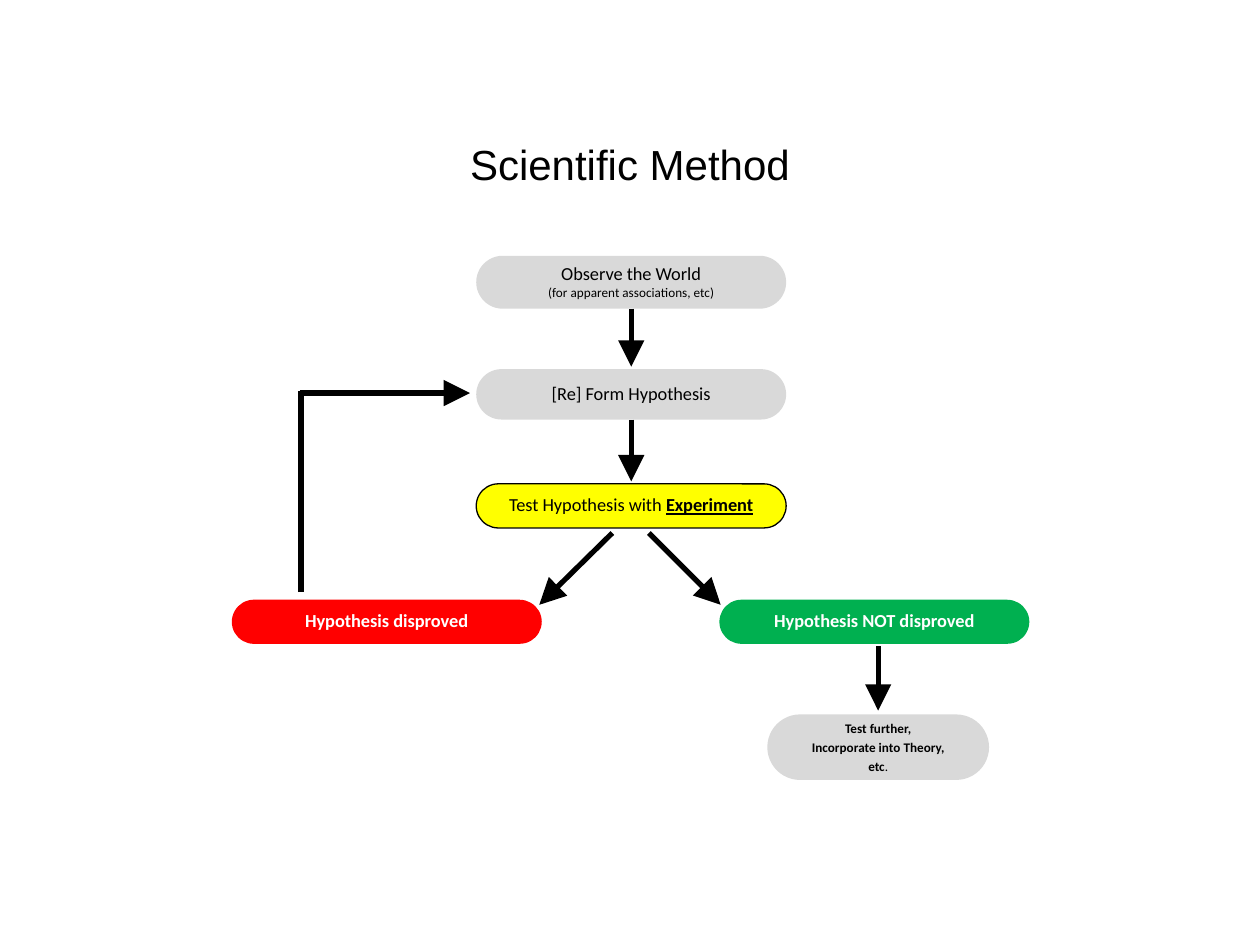
from dataclasses import dataclass
from typing import Optional

from lxml.etree import SubElement
from pptx import Presentation
from pptx.dml.color import RGBColor
from pptx.enum.shapes import MSO_CONNECTOR as Connector, MSO_SHAPE as Shape
from pptx.enum.text import MSO_ANCHOR as Anchor, PP_ALIGN as Align
from pptx.oxml.ns import qn
from pptx.util import Inches, Pt


@dataclass(frozen=True)
class Theme:
    black: str = "000000"
    white: str = "FFFFFF"
    gray: str = "D9D9D9"
    yellow: str = "FFFF00"
    green: str = "00B050"
    red: str = "FF0000"
    title_font: str = "Arial"
    body_font: str = "Calibri"
    title_size: float = 24
    body_size: float = 10.5
    small_size: float = 7.5
    arrow_width: float = 3
    outline_width: float = 0.75


THEME = Theme()


@dataclass(frozen=True)
class Words:
    text: str
    size: float = THEME.body_size
    bold: bool = False
    underline: bool = False


@dataclass(frozen=True)
class Step:
    key: str
    left: float
    top: float
    width: float
    height: float
    fill: str
    lines: tuple[tuple[Words, ...], ...]
    color: str = THEME.black
    outlined: bool = False
    spacing: Optional[float] = None


@dataclass(frozen=True)
class Arrow:
    start: tuple[float, float]
    end: tuple[float, float]
    source: Optional[str] = None  # step whose bottom the arrow leaves
    head: bool = True


WIDTH = 2.46
CENTER = 5.01
LEFT = CENTER - WIDTH / 2
FURTHER_X = 6.97

STEPS = (
    Step("observe", LEFT, 2.03, WIDTH, 0.42, THEME.gray, (
        (Words("Observe the World"),),
        (Words("(for apparent associations, etc)", THEME.small_size),),
    )),
    Step("form", LEFT, 2.93, WIDTH, 0.4, THEME.gray,
         ((Words("[Re] Form Hypothesis"),),)),
    Step("test", LEFT, 3.84, WIDTH, 0.35, THEME.yellow, (
        (Words("Test Hypothesis with "),
         Words("Experiment", bold=True, underline=True)),
    ), outlined=True),
    Step("disproved", 1.84, 4.76, WIDTH, 0.35, THEME.red,
         ((Words("Hypothesis disproved", bold=True),),), THEME.white),
    Step("not disproved", 5.71, 4.76, WIDTH, 0.35, THEME.green,
         ((Words("Hypothesis NOT disproved", bold=True),),), THEME.white),
    Step("further", 6.09, 5.67, 1.76, 0.52, THEME.gray, (
        (Words("Test further,", THEME.small_size, True),),
        (Words("Incorporate into Theory,", THEME.small_size, True),),
        (Words("etc", THEME.small_size, True), Words(".", THEME.small_size)),
    ), spacing=1.2),
)

ARROWS = (
    Arrow((CENTER, 2.45), (CENTER, 2.91), "observe"),
    Arrow((CENTER, 3.33), (CENTER, 3.82), "form"),
    Arrow((4.86, 4.23), (4.28, 4.8)),
    Arrow((5.15, 4.23), (5.72, 4.8)),
    Arrow((FURTHER_X, 5.13), (FURTHER_X, 5.64)),
    # Return path from the disproved hypothesis
    Arrow((2.39, 4.7), (2.39, 3.1), head=False),
    Arrow((2.38, 3.12), (3.73, 3.12)),
)


def rgb(color: str) -> RGBColor:
    return RGBColor.from_string(color)


def format_run(run, font: str, size: float, color: str) -> None:
    run.font.name = font
    run.font.size = Pt(size)
    run.font.color.rgb = rgb(color)


def draw_title(slide, text: str) -> None:
    title = slide.shapes.title
    title.left, title.top = Inches(1.25), Inches(1.06)
    title.width, title.height = Inches(7.5), Inches(0.42)
    frame = title.text_frame
    frame.text = text
    frame.vertical_anchor = Anchor.TOP
    frame.margin_left = frame.margin_right = Inches(0.07)
    frame.margin_top = frame.margin_bottom = Inches(0.04)
    paragraph = frame.paragraphs[0]
    paragraph.alignment = Align.CENTER
    format_run(paragraph.runs[0], THEME.title_font, THEME.title_size, THEME.black)


def draw_step(slide, step: Step):
    shape = slide.shapes.add_shape(
        Shape.ROUNDED_RECTANGLE, Inches(step.left), Inches(step.top),
        Inches(step.width), Inches(step.height))
    shape.adjustments[0] = 0.5
    shape.shadow.inherit = False
    shape.fill.solid()
    shape.fill.fore_color.rgb = rgb(step.fill)
    if step.outlined:
        shape.line.color.rgb = rgb(THEME.black)
        shape.line.width = Pt(THEME.outline_width)
    else:
        shape.line.fill.background()

    frame = shape.text_frame
    frame.word_wrap = True
    frame.vertical_anchor = Anchor.MIDDLE
    frame.margin_left = frame.margin_right = frame.margin_top = 0
    frame.margin_bottom = Inches(0.02)
    for index, line in enumerate(step.lines):
        paragraph = frame.add_paragraph() if index else frame.paragraphs[0]
        paragraph.alignment = Align.CENTER
        paragraph.line_spacing = step.spacing
        for words in line:
            run = paragraph.add_run()
            run.text = words.text
            format_run(run, THEME.body_font, words.size, step.color)
            run.font.bold = words.bold
            run.font.underline = words.underline
    return shape


def draw_arrow(slide, arrow: Arrow, shapes: dict) -> None:
    points = [Inches(value) for value in (*arrow.start, *arrow.end)]
    connector = slide.shapes.add_connector(Connector.STRAIGHT, *points)
    connector.line.color.rgb = rgb(THEME.black)
    connector.line.width = Pt(THEME.arrow_width)
    if arrow.head:
        SubElement(connector.line._get_or_add_ln(), qn("a:tailEnd"),
                   type="triangle", w="lg", len="lg")
    SubElement(connector._element.spPr, qn("a:effectLst"))
    if arrow.source:
        connector.begin_connect(shapes[arrow.source], 2)


def main() -> None:
    presentation = Presentation()
    presentation.slide_width, presentation.slide_height = Inches(10), Inches(7.5)
    slide = presentation.slides.add_slide(presentation.slide_layouts[5])

    draw_title(slide, "Scientific Method")
    # Flowchart: steps first, then the arrows between them
    shapes = {step.key: draw_step(slide, step) for step in STEPS}
    for arrow in ARROWS:
        draw_arrow(slide, arrow, shapes)

    presentation.save("out.pptx")


if __name__ == "__main__":
    main()
